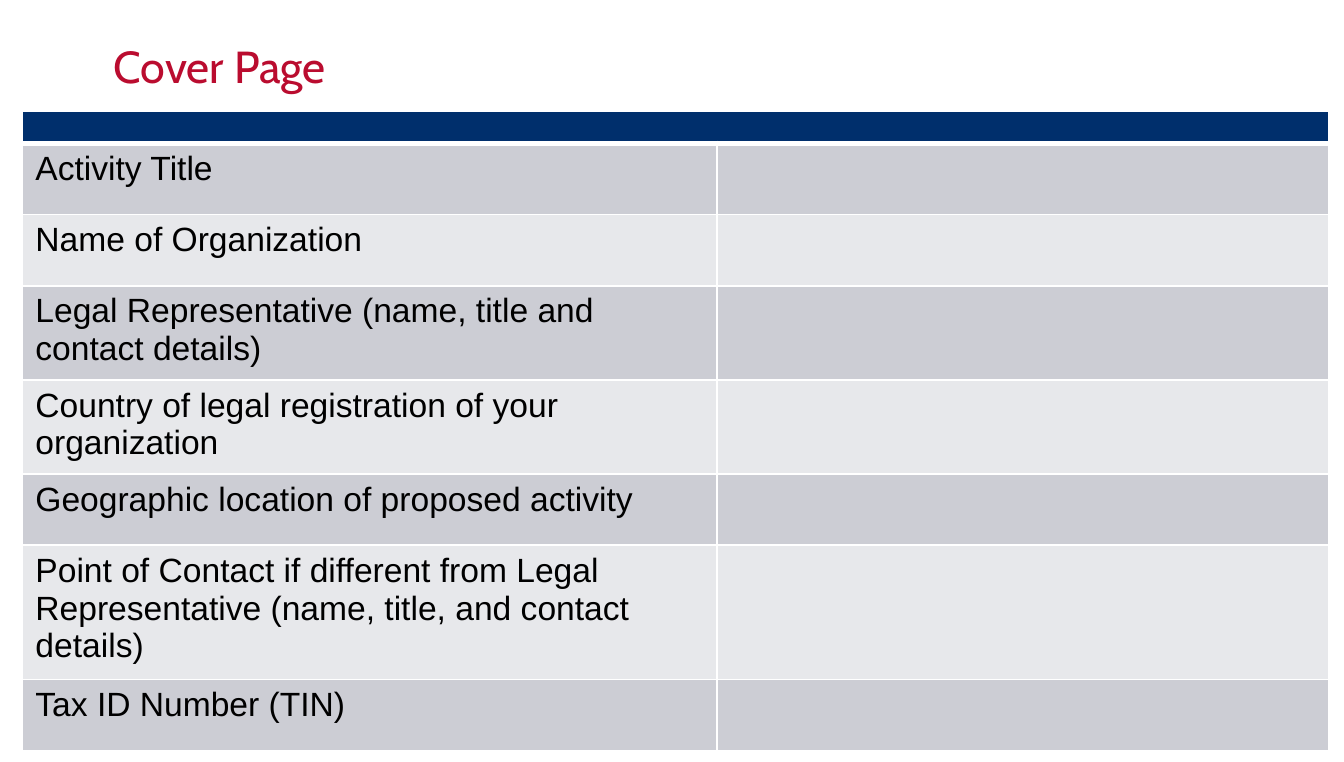
import lxml.etree
import pptx
import pptx.dml.color
import pptx.enum.text
import pptx.oxml.ns
import pptx.util

Pt = pptx.util.Pt
RGBColor = pptx.dml.color.RGBColor
qn = pptx.oxml.ns.qn

CRIMSON = RGBColor(0xBA, 0x0C, 0x2F)
NAVY = RGBColor(0x00, 0x2F, 0x6C)
GREY = RGBColor(0xCC, 0xCD, 0xD4)
PALE_GREY = RGBColor(0xE7, 0xE8, 0xEB)
WHITE = RGBColor(0xFF, 0xFF, 0xFF)
BLACK = RGBColor(0x00, 0x00, 0x00)

SHORT_ROW, TWO_LINE_ROW, THREE_LINE_ROW = 38.2, 48.24, 69.1
HEADER_ROW = 17.3
FIELDS = [
    ("Activity Title", SHORT_ROW),
    ("Name of Organization", SHORT_ROW),
    ("Legal Representative (name, title and contact details)", TWO_LINE_ROW),
    ("Country of legal registration of your organization", TWO_LINE_ROW),
    ("Geographic location of proposed activity", SHORT_ROW),
    ("Point of Contact if different from Legal Representative "
     "(name, title, and contact details)", THREE_LINE_ROW),
    ("Tax ID Number (TIN)", SHORT_ROW),
]
COLUMN_SHARES = (0.532, 0.468)


def add_run(paragraph, text, font, size, color):
    run = paragraph.add_run()
    run.text = text
    run.font.name = font
    run.font.size = Pt(size)
    run.font.color.rgb = color


def style_cell(cell, color, top=1, bottom=1):
    """Give a cell its white borders, then its fill."""
    properties = cell._tc.get_or_add_tcPr()
    for side, width in (("L", 1), ("R", 1), ("T", top), ("B", bottom)):
        border = lxml.etree.SubElement(properties, qn(f"a:ln{side}"), w=str(Pt(width)))
        solid = lxml.etree.SubElement(border, qn("a:solidFill"))
        lxml.etree.SubElement(solid, qn("a:srgbClr"), val=str(WHITE))
    cell.fill.solid()
    cell.fill.fore_color.rgb = color


def set_empty_size(cell, size):
    """Set the text size of an empty cell, which governs its least height."""
    paragraph = cell.text_frame.paragraphs[0]._p
    lxml.etree.SubElement(paragraph, qn("a:endParaRPr"), sz=str(size * 100))


def add_title(slide, left, top, width, height):
    frame = slide.shapes.add_textbox(Pt(left), Pt(top), Pt(width), Pt(height)).text_frame
    frame.word_wrap = True
    frame.vertical_anchor = pptx.enum.text.MSO_ANCHOR.BOTTOM
    add_run(frame.paragraphs[0], "Cover Page", "Cabin", 24, CRIMSON)


def add_applicant_table(slide, left, top, width):
    heights = [HEADER_ROW] + [height for _, height in FIELDS]
    table = slide.shapes.add_table(
        len(heights), len(COLUMN_SHARES),
        Pt(left), Pt(top), Pt(width), Pt(sum(heights))).table
    for column, share in zip(table.columns, COLUMN_SHARES):
        column.width = Pt(width * share)
    for row, height in zip(table.rows, heights):
        row.height = Pt(height)

    # Header band
    for cell in table.rows[0].cells:
        style_cell(cell, NAVY, bottom=3)
        set_empty_size(cell, 8)
    table.cell(0, 0).merge(table.cell(0, 1))

    # Field names beside empty answer cells
    for index, (field, _) in enumerate(FIELDS, start=1):
        for cell in table.rows[index].cells:
            style_cell(cell, GREY if index % 2 else PALE_GREY, top=3 if index == 1 else 1)
        name, answer = table.rows[index].cells
        add_run(name.text_frame.paragraphs[0], field, "Arial", 18, BLACK)
        set_empty_size(answer, 18)


def main():
    deck = pptx.Presentation()
    deck.slide_width, deck.slide_height = Pt(720), Pt(408.24)
    slide = deck.slides.add_slide(deck.slide_layouts[6])
    add_title(slide, 54, 17.3, 612, 36)
    add_applicant_table(slide, 11.8, 59.4, 700)
    deck.save("out.pptx")


if __name__ == "__main__":
    main()
